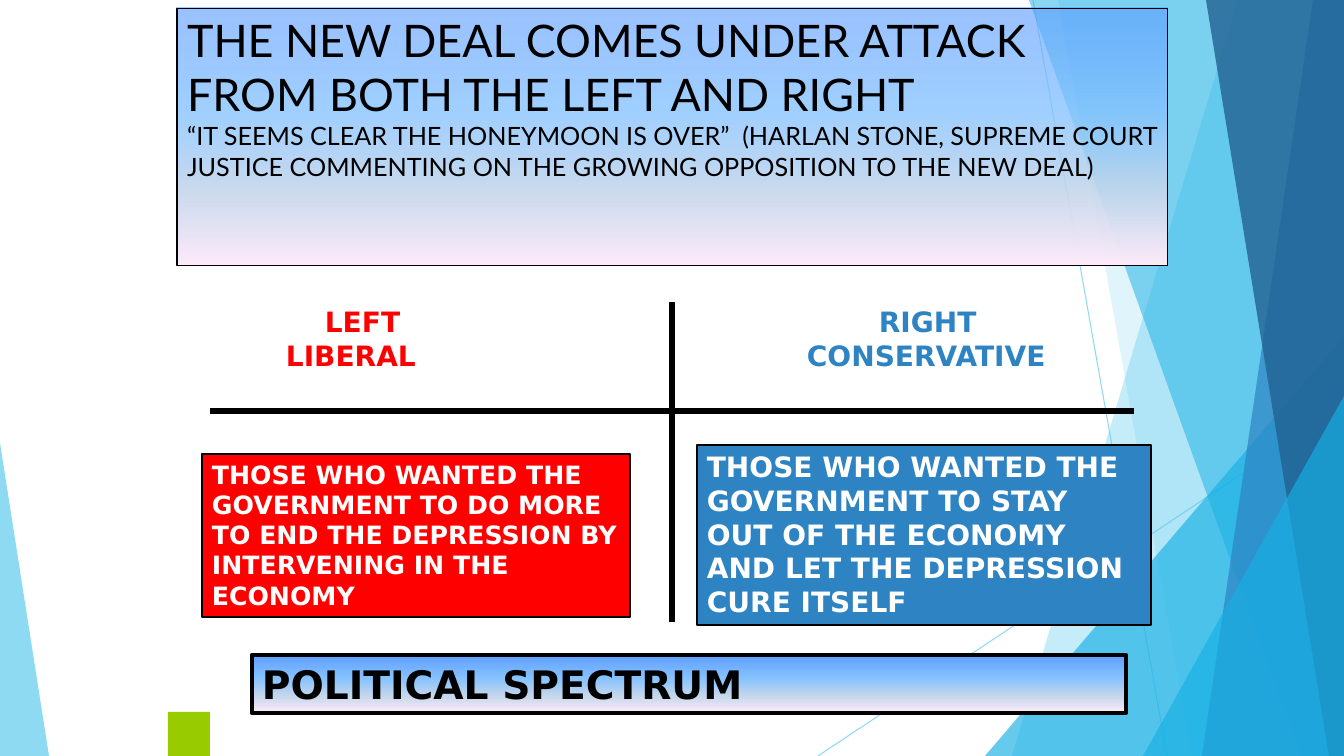
from lxml import etree
from pptx import Presentation
from pptx import util as u
from pptx.dml.color import RGBColor
from pptx.enum import shapes, text
from pptx.oxml.ns import qn

C = {"sky": "5FCBEF", "cyan": "17B0E4", "blue": "2E83C3", "navy": "226292",
     "red": "FF0000", "green": "99CC00", "white": "FFFFFF", "black": "000000",
     "g1": "5E9EFF", "g2": "85C2FF", "g3": "C4D6EB", "g4": "FFEBFA"}
W, H = 1344, 756
PX = u.Inches(1) / 100.8
SANS, TITLE_FONT = "DejaVu Sans", "Lato"

RAYS = [(1033, 0, 1167, H), (W, 406, 818, H)]
BACKDROP = [
    ("band", (1238, 1012), "sky", 36),
    ("band", (1058, 1192), "sky", 20),
    ("triangle", (985, 336, 359, 420, 1), "cyan", 66),
    ("band", (1029, 1301), "cyan", 50),
    ("band", (1313, 1202), "blue", 70),
    ("band", (1206, 1329), "navy", 80),
    ("triangle", (1143, 396, 201, 360, 1), "cyan", 66),
    ("triangle", (0, 443, 49, 313, 0), "sky", 70),
]
TITLE_BOX = (177, 8, 991, 258)
TITLE = [
    ("THE NEW DEAL COMES UNDER ATTACK FROM BOTH THE LEFT AND RIGHT", 32),
    ("“IT SEEMS CLEAR THE HONEYMOON IS OVER”  (HARLAN STONE, SUPREME COURT "
     "JUSTICE COMMENTING ON THE GROWING OPPOSITION TO THE NEW DEAL)", 18),
]
AXES = [(210, 411, 1134, 411), (672, 302, 672, 622)]
HEADINGS_BOX = (227, 300, 940, 78)
HEADINGS = [
    [("LEFT", "red", 88), ("RIGHT", "blue", 642)],
    [("LIBERAL", "red", 49), ("CONSERVATIVE", "blue", 570)],
]
VIEWS = [
    ((202, 454, 428, 163), "red", 18,
     "THOSE WHO WANTED THE GOVERNMENT TO DO MORE TO END THE DEPRESSION "
     "BY INTERVENING IN THE ECONOMY"),
    ((697, 445, 454, 180), "blue", 20,
     "THOSE WHO WANTED THE GOVERNMENT TO STAY OUT OF THE ECONOMY AND LET "
     "THE DEPRESSION CURE ITSELF"),
]
SPECTRUM_BOX = (252, 655, 874, 58)
SPECTRUM = "POLITICAL SPECTRUM"
GREEN_BOX = (168, 712, 42, 44)
GRADIENT = [(0, "g1"), (40, "g2"), (70, "g3"), (100, "g4")]


def px(*values):
    return [round(v * PX) for v in values]


def rgb(name):
    return RGBColor.from_string(C[name])


def set_alpha(clr, percent):
    etree.SubElement(clr, qn("a:alpha"), val=str(percent * 1000))


def paint(s, color, alpha=100):
    s.shadow.inherit = False
    s.fill.solid()
    s.fill.fore_color.rgb = rgb(color)
    if alpha < 100:
        set_alpha(s._element.spPr.find(".//" + qn("a:srgbClr")), alpha)
    s.line.fill.background()


def outline(s, points):
    s.line.color.rgb = rgb("black")
    s.line.width = u.Pt(points)


def shade(s, alphas):
    s.fill.gradient()
    s.fill.gradient_angle = 270
    stops = s._element.spPr.find(".//" + qn("a:gsLst"))
    for stop in list(stops):
        stops.remove(stop)
    for (pos, color), alpha in zip(GRADIENT, alphas):
        gs = etree.SubElement(stops, qn("a:gs"), pos=str(pos * 1000))
        clr = etree.SubElement(gs, qn("a:srgbClr"), val=C[color])
        if alpha < 100:
            set_alpha(clr, alpha)


def add_line(slide, ends, color, points, alpha=100):
    s = slide.shapes.add_connector(shapes.MSO_CONNECTOR.STRAIGHT, *px(*ends))
    s.line.color.rgb = rgb(color)
    s.line.width = u.Pt(points)
    if alpha < 100:
        set_alpha(s._element.spPr.find(".//" + qn("a:srgbClr")), alpha)
    etree.SubElement(s._element.spPr, qn("a:effectLst"))


def add_rect(slide, box, color):
    s = slide.shapes.add_shape(shapes.MSO_SHAPE.RECTANGLE, *px(*box))
    paint(s, color)
    return s


def prepare(s):
    tf = s.text_frame
    tf.word_wrap = True
    tf.auto_size = text.MSO_AUTO_SIZE.NONE
    tf.vertical_anchor = text.MSO_ANCHOR.TOP
    return tf


def add_run(p, words, size, color, font=SANS, bold=True):
    p.alignment = text.PP_ALIGN.LEFT
    r = p.add_run()
    r.text = words
    r.font.name = font
    r.font.size = u.Pt(size)
    r.font.bold = bold
    r.font.color.rgb = rgb(color)


def paragraphs(tf, count):
    return [tf.paragraphs[0]] + [tf.add_paragraph() for _ in range(count - 1)]


def add_backdrop(slide):
    for ends in RAYS:
        add_line(slide, ends, "sky", 0.75, 70)
    for kind, place, color, alpha in BACKDROP:
        if kind == "band":
            top, bottom = place
            builder = slide.shapes.build_freeform(top, 0, scale=PX)
            builder.add_line_segments([(W, 0), (W, H), (bottom, H)], close=True)
            s = builder.convert_to_shape()
        else:
            s = slide.shapes.add_shape(
                shapes.MSO_SHAPE.ISOSCELES_TRIANGLE, *px(*place[:4]))
            s.adjustments[0] = place[4]
        paint(s, color, alpha)


def add_title(slide):
    s = slide.shapes.title
    slide.shapes._spTree.append(s._element)
    s.left, s.top, s.width, s.height = px(*TITLE_BOX)
    shade(s, (62, 77, 89, 100))
    outline(s, 0.75)
    tf = prepare(s)
    for p, (words, size) in zip(paragraphs(tf, len(TITLE)), TITLE):
        add_run(p, words, size, "black", TITLE_FONT, False)


def add_headings(slide):
    tf = prepare(slide.shapes.add_textbox(*px(*HEADINGS_BOX)))
    for p, row in zip(paragraphs(tf, len(HEADINGS)), HEADINGS):
        tabs = etree.SubElement(p._p.get_or_add_pPr(), qn("a:tabLst"))
        for words, color, stop in row:
            etree.SubElement(tabs, qn("a:tab"), pos=str(px(stop)[0]), algn="l")
            add_run(p, "\t" + words, 20, color)


def main():
    prs = Presentation()
    prs.slide_width, prs.slide_height = px(W, H)
    slide = prs.slides.add_slide(prs.slide_layouts.get_by_name("Title Only"))
    add_backdrop(slide)
    add_title(slide)
    for ends in AXES:
        add_line(slide, ends, "black", 4.5)
    add_headings(slide)
    for box, color, size, words in VIEWS:
        s = add_rect(slide, box, color)
        outline(s, 1)
        add_run(prepare(s).paragraphs[0], words, size, "white")
    s = add_rect(slide, SPECTRUM_BOX, "g1")
    shade(s, (100,) * len(GRADIENT))
    outline(s, 3)
    add_run(prepare(s).paragraphs[0], SPECTRUM, 28, "black")
    add_rect(slide, GREEN_BOX, "green")
    prs.save("out.pptx")


if __name__ == "__main__":
    main()
